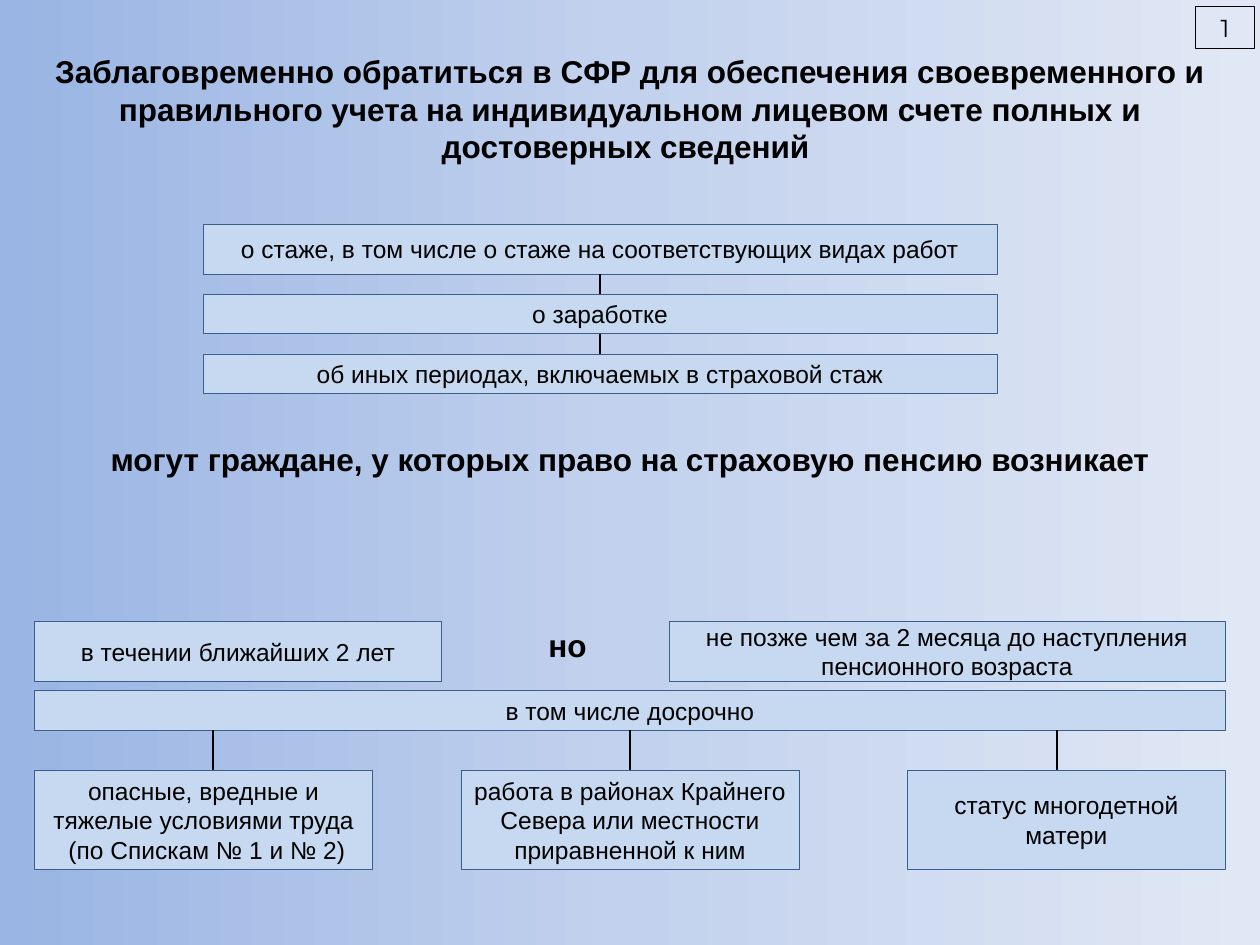
from copy import deepcopy

from lxml import etree
from pptx import Presentation
from pptx.dml.color import RGBColor
from pptx.enum import shapes, text
from pptx.oxml import ns
from pptx.util import Pt

COLORS = {
    "ink": "000000",
    "box": "C6D9F1",
    "edge": "3A5F8C",
    "sky": ["9AB5E4", "C2D1ED", "E1E8F5"],
}


def rgb(name):
    return RGBColor.from_string(COLORS[name])


def points(*lengths):
    return [Pt(length) for length in lengths]


def paint_background(page):
    fill = page.background.fill
    fill.gradient()
    fill.gradient_angle = 0
    stop_list = next(page.element.iter(ns.qn("a:gsLst")))
    stop_list.insert(1, deepcopy(stop_list[0]))
    for index, (stop, color) in enumerate(zip(fill.gradient_stops, COLORS["sky"])):
        stop.position = index / 2
        stop.color.rgb = RGBColor.from_string(color)


def write(shape, lines, size, bold=False, font="Arial",
          anchor=text.MSO_ANCHOR.MIDDLE):
    frame = shape.text_frame
    frame.word_wrap = True
    frame.auto_size = text.MSO_AUTO_SIZE.NONE
    frame.vertical_anchor = anchor
    for index, line in enumerate(lines):
        para = frame.add_paragraph() if index else frame.paragraphs[0]
        para.alignment = text.PP_ALIGN.CENTER
        span = para.add_run()
        span.text = line
        span.font.size = Pt(size)
        span.font.name = font
        span.font.bold = bold
        span.font.color.rgb = rgb("ink")


def add_box(page, left, top, width, height, *lines):
    box = page.shapes.add_shape(
        shapes.MSO_SHAPE.RECTANGLE, *points(left, top, width, height))
    box.shadow.inherit = False
    box.fill.solid()
    box.fill.fore_color.rgb = rgb("box")
    box.line.color.rgb = rgb("edge")
    box.line.width = Pt(0.25)
    write(box, lines, 14)
    return box


def add_link(page, x, top, bottom):
    link = page.shapes.add_connector(
        shapes.MSO_CONNECTOR.STRAIGHT, *points(x, top, x, bottom))
    link.line.color.rgb = rgb("ink")
    link.line.width = Pt(1.25)
    etree.SubElement(link.element.spPr, ns.qn("a:effectLst"))
    return link


def join(link, upper, lower):
    link.begin_connect(upper, 2)
    link.end_connect(lower, 0)


def add_caption(page, left, top, width, height, line):
    caption = page.shapes.add_textbox(*points(left, top, width, height))
    write(caption, [line], 18, bold=True, anchor=text.MSO_ANCHOR.TOP)


def add_heading(page, left, top, width, height):
    title = page.shapes.title
    title.left, title.top, title.width, title.height = points(
        left, top, width, height)
    write(title, [
        "Заблаговременно обратиться в СФР для обеспечения своевременного и "
        "правильного учета на индивидуальном лицевом счете полных и "
        "достоверных сведений "], 18, bold=True, anchor=text.MSO_ANCHOR.TOP)


def add_records(page, left, top, width):
    """Stack the kinds of records, each linked to the one above."""
    gap = 11.5
    records = [
        (28.4, "о стаже, в том числе о стаже на соответствующих видах работ"),
        (22.6, "о заработке"),
        (22.6, "об иных периодах, включаемых в страховой стаж"),
    ]
    previous = None
    for height, line in records:
        box = add_box(page, left, top, width, height, line)
        if previous is not None:
            join(add_link(page, left + width / 2, top - gap, top), previous, box)
        previous = box
        top += height + gap


def add_timing(page, left, top, width, height):
    late_width = 318
    add_box(page, left, top, 232.5, height, "в течении ближайших 2 лет")
    add_box(page, left + width - late_width, top, late_width, height,
            "не позже чем за 2 месяца до наступления пенсионного возраста")
    add_caption(page, left + 124.5, top - 0.6, 360, 29, "но")


def add_early_grounds(page, left, top, width):
    """Place the early retirement bar and the three grounds hanging from it."""
    bar_height, drop, card_height = 22.8, 22.8, 56.8
    bar = add_box(page, left, top, width, bar_height, "в том числе досрочно")
    bar_bottom = top + bar_height
    card_top = bar_bottom + drop
    grounds = [
        (0, 193, 102, ["опасные, вредные и тяжелые условиями труда",
                       " (по Спискам № 1 и № 2)"]),
        ((width - 193) / 2, 193, width / 2,
         ["работа в районах Крайнего Севера или местности приравненной к ним"]),
        (width - 181.6, 181.6, 584, ["статус многодетной матери"]),
    ]
    for offset, card_width, link_x, lines in grounds:
        card = add_box(page, left + offset, card_top, card_width, card_height,
                       *lines)
        link = add_link(page, left + link_x, bar_bottom, card_top)
        if link_x == width / 2:
            join(link, bar, card)


def add_page_number(page, left, top, width, height):
    box = page.shapes.add_shape(
        shapes.MSO_SHAPE.RECTANGLE, *points(left, top, width, height))
    box.shadow.inherit = False
    box.fill.background()
    box.line.color.rgb = rgb("ink")
    box.line.width = Pt(0.75)
    write(box, ["1"], 14, font="Montserrat")


def main():
    deck = Presentation()
    deck.slide_width, deck.slide_height = points(720, 540)
    page = deck.slides.add_slide(deck.slide_layouts[5])
    margin, width = 19.8, 680.4
    paint_background(page)
    add_heading(page, margin, 26, width, 72.7)
    add_records(page, 116, 128.2, 453.8)
    add_caption(page, margin, 247.6, width, 29,
                "могут граждане, у которых право на страховую пенсию возникает")
    add_timing(page, margin, 355, width, 34.2)
    add_early_grounds(page, margin, 394.5, width)
    add_page_number(page, 683.2, 3.6, 33.8, 24.2)
    deck.save("out.pptx")


if __name__ == "__main__":
    main()
